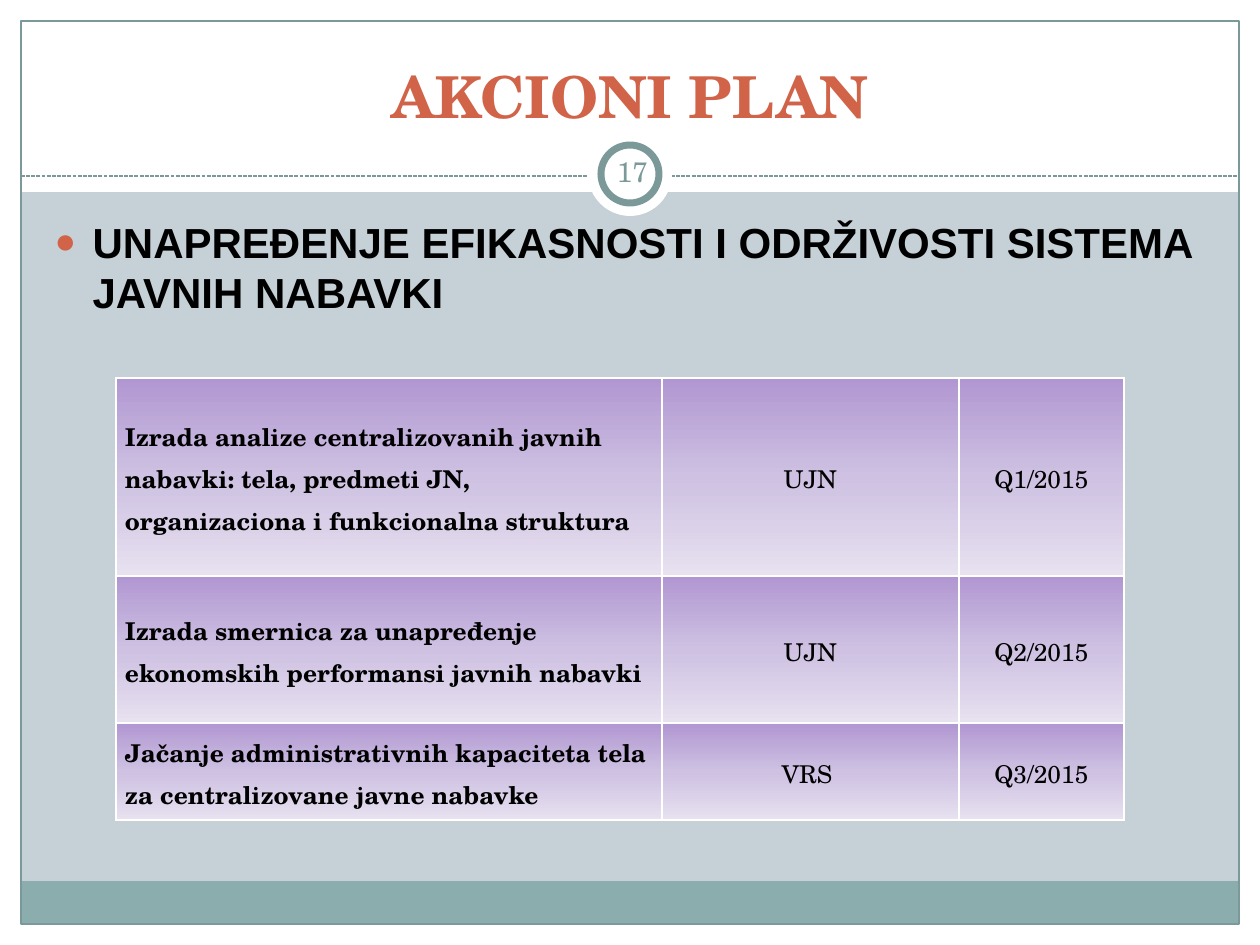
from lxml import etree
from pptx import Presentation
from pptx.dml.color import RGBColor
from pptx.enum.dml import MSO_LINE
from pptx.enum.shapes import MSO_CONNECTOR, MSO_SHAPE
from pptx.enum.text import MSO_ANCHOR, MSO_AUTO_SIZE, PP_ALIGN
from pptx.oxml.ns import qn
from pptx.util import Pt

PX = 914400 / 126
W, H = 1260, 945
RECT, OVAL = MSO_SHAPE.RECTANGLE, MSO_SHAPE.OVAL
LEFT, CENTER = PP_ALIGN.LEFT, PP_ALIGN.CENTER
MIDDLE, BOTTOM = MSO_ANCHOR.MIDDLE, MSO_ANCHOR.BOTTOM
DASH = MSO_LINE.SQUARE_DOT
STRAIGHT = MSO_CONNECTOR.STRAIGHT
NO_FIT = MSO_AUTO_SIZE.NONE
SERIF, SANS = "TeX Gyre Schola", "Arial"
COLORS = {
    "background": "C5D1D7",
    "white": "FFFFFF",
    "black": "000000",
    "footer": "8CADAE",
    "frame": "7C999A",
    "accent": "D16349",
}
CELL_STOPS = [(0, "B197D2"), (50, "CEC1E2"), (100, "E7E1F0")]
COLUMN_WIDTHS = [546, 297, 165]
ROW_HEIGHTS = [198, 147, 97]
ACTIONS = [
    ("Izrada analize centralizovanih javnih nabavki: tela, predmeti JN, "
     "organizaciona i funkcionalna struktura", "UJN", "Q1/2015"),
    ("Izrada smernica za unapređenje ekonomskih performansi javnih nabavki",
     "UJN", "Q2/2015"),
    ("Jačanje administrativnih kapaciteta tela za centralizovane javne nabavke",
     "VRS ", "Q3/2015"),
]


def px(n):
    return round(n * PX)


def rgb(name):
    return RGBColor.from_string(COLORS[name])


def place(sp, box):
    sp.left, sp.top, sp.width, sp.height = map(px, box)


def add_shape(slide, kind, box, fill=None, line=None, width=0.75):
    sp = slide.shapes.add_shape(kind, *map(px, box))
    sp.shadow.inherit = False
    if fill:
        sp.fill.solid()
        sp.fill.fore_color.rgb = rgb(fill)
    else:
        sp.fill.background()
    if line:
        sp.line.color.rgb = rgb(line)
        sp.line.width = Pt(width)
    else:
        sp.line.fill.background()


def set_text(tf, text, size, font, color, bold=False, align=LEFT):
    tf.text = text
    p = tf.paragraphs[0]
    p.alignment = align
    f = p.runs[0].font
    f.size, f.name, f.bold = Pt(size), font, bold
    f.color.rgb = rgb(color)
    return p


def add_frame(slide, box, margin=21, header=192, footer=43):
    """White margins and header, footer band and outline."""
    x, y, w, h = box
    inner = (x + margin, y + margin, w - 2 * margin, h - 2 * margin)
    for edge in ((x, y + h - margin, w, margin), (x, y, w, header),
                 (x, y, margin, h), (x + w - margin, y, margin, h)):
        add_shape(slide, RECT, edge, "white")
    add_shape(slide, RECT,
              (inner[0], y + h - margin - footer, inner[2], footer), "footer")
    add_shape(slide, RECT, inner, line="frame")


def add_number_badge(slide, box, number):
    """Dashed rule across the box with the ringed slide number at its middle."""
    x, y, w, h = box
    rule_y = y + 44
    cxn = slide.shapes.add_connector(
        STRAIGHT, *map(px, (x, rule_y, x + w, rule_y)))
    cxn.line.color.rgb = rgb("frame")
    cxn.line.width = Pt(0.75)
    cxn.line.dash_style = DASH
    etree.SubElement(cxn._element.spPr, qn("a:effectLst"))

    cx, cy = x + w // 2, y + h // 2
    for size, line in ((h, None), (58, "frame")):
        ring = (cx - size // 2, cy - size // 2, size, size)
        add_shape(slide, OVAL, ring, "white", line, 4)

    tb = slide.shapes.add_textbox(*map(px, (cx - 29, y + 9, 63, 60)))
    tf = tb.text_frame
    tf.word_wrap = True
    tf.vertical_anchor = MIDDLE
    tf.margin_left = tf.margin_right = px(6)
    tf.margin_top = tf.margin_bottom = px(6)
    set_text(tf, number, 16, SERIF, "frame", align=CENTER)


def fill_title(slide, box, text):
    sp = slide.shapes.title
    place(sp, box)
    tf = sp.text_frame
    tf.auto_size = NO_FIT
    tf.vertical_anchor = BOTTOM
    set_text(tf, text, 33, SERIF, "accent", True, CENTER)
    slide.shapes._spTree.append(sp._element)  # in front of the frame


def fill_body(slide, box, text):
    sp = slide.placeholders[1]
    place(sp, box)
    tf = sp.text_frame
    tf.auto_size = NO_FIT
    p = set_text(tf, text, 24, SANS, "black", True)
    p.space_before = Pt(5)
    pPr = p._p.get_or_add_pPr()
    pPr.set("marL", str(px(38)))
    pPr.set("indent", str(-px(38)))
    color = etree.SubElement(pPr, qn("a:buClr"))
    etree.SubElement(color, qn("a:srgbClr"), val=COLORS["accent"])
    etree.SubElement(pPr, qn("a:buSzPct"), val="85000")
    etree.SubElement(pPr, qn("a:buFont"), typeface=SANS)
    etree.SubElement(pPr, qn("a:buChar"), char="●")
    slide.shapes._spTree.append(sp._element)


def style_cell(cell):
    """White borders and a vertical three-stop gradient."""
    tcPr = cell._tc.get_or_add_tcPr()
    for side in ("lnL", "lnR", "lnT", "lnB"):
        ln = etree.SubElement(tcPr, qn("a:" + side), w=str(Pt(1)))
        solid = etree.SubElement(ln, qn("a:solidFill"))
        etree.SubElement(solid, qn("a:srgbClr"), val=COLORS["white"])
    grad = etree.SubElement(tcPr, qn("a:gradFill"), rotWithShape="1")
    stops = etree.SubElement(grad, qn("a:gsLst"))
    for pos, color in CELL_STOPS:
        gs = etree.SubElement(stops, qn("a:gs"), pos=str(pos * 1000))
        etree.SubElement(gs, qn("a:srgbClr"), val=color)
    etree.SubElement(grad, qn("a:lin"), ang="5400000", scaled="0")


def add_action_table(slide, x, y):
    box = (x, y, sum(COLUMN_WIDTHS), sum(ROW_HEIGHTS))
    table = slide.shapes.add_table(
        len(ACTIONS), len(COLUMN_WIDTHS), *map(px, box)).table
    table.first_row = table.horz_banding = False
    for col, width in zip(table.columns, COLUMN_WIDTHS):
        col.width = px(width)
    for row, height, texts in zip(table.rows, ROW_HEIGHTS, ACTIONS):
        row.height = px(height)
        for i, (cell, text) in enumerate(zip(row.cells, texts)):
            cell.vertical_anchor = MIDDLE
            cell.margin_left = cell.margin_right = px(9)
            cell.margin_top = cell.margin_bottom = 0
            p = set_text(cell.text_frame, text, 14, SERIF, "black",
                         i == 0, CENTER if i else LEFT)
            p.line_spacing = 1.1
            p.space_before = p.space_after = Pt(2.9)
            style_cell(cell)


def main():
    prs = Presentation()
    prs.slide_width, prs.slide_height = px(W), px(H)
    slide = prs.slides.add_slide(prs.slide_layouts[1])
    slide.background.fill.solid()
    slide.background.fill.fore_color.rgb = rgb("background")

    add_frame(slide, (0, 0, W, H))
    add_number_badge(slide, (21, 132, W - 42, 84), "17")
    fill_title(slide, (42, 32, W - 84, 104), "AKCIONI PLAN")
    fill_body(slide, (42, 210, 1172, 630),
              "UNAPREĐENJE EFIKASNOSTI I ODRŽIVOSTI SISTEMA JAVNIH NABAVKI")
    add_action_table(slide, 116, 378)
    prs.save("out.pptx")


if __name__ == "__main__":
    main()
